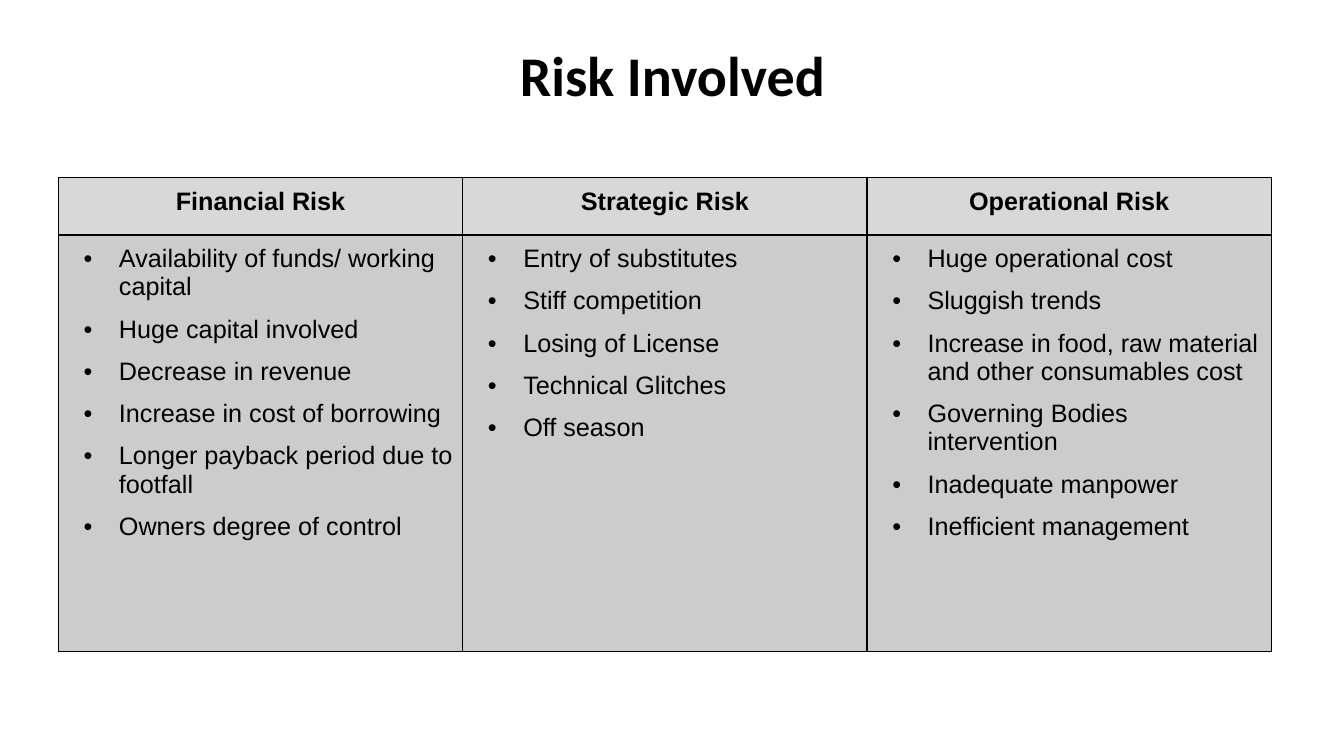
from dataclasses import dataclass

from lxml import etree
from pptx import Presentation
from pptx.dml.color import RGBColor
from pptx.enum.text import MSO_ANCHOR, PP_ALIGN
from pptx.oxml.ns import qn
from pptx.util import Inches, Pt

TOP = MSO_ANCHOR.TOP
CENTER = PP_ALIGN.CENTER
LEFT = PP_ALIGN.LEFT
BLANK_LAYOUT = 6


@dataclass(frozen=True)
class Theme:
    """Colours, fonts and sizes of the slide."""
    ink: str = "000000"
    header_fill: str = "D8D8D8"
    body_fill: str = "CCCCCC"
    title_font: str = "Calibri"
    table_font: str = "Arial"
    title_size: int = 40
    table_size: int = 18
    item_gap: int = 10
    thin_line: int = 1
    thick_line: int = 2


THEME = Theme()

RISKS = {
    "Financial Risk": [
        "Availability of funds/ working capital",
        "Huge capital involved",
        "Decrease in revenue",
        "Increase in cost of borrowing",
        "Longer payback period due to footfall",
        "Owners degree of control",
    ],
    "Strategic Risk": [
        "Entry of substitutes",
        "Stiff competition",
        "Losing of License",
        "Technical Glitches",
        "Off season",
    ],
    "Operational Risk": [
        "Huge operational cost",
        "Sluggish trends",
        "Increase in food, raw material and other consumables cost",
        "Governing Bodies intervention",
        "Inadequate manpower",
        "Inefficient management",
    ],
}


def apply_format(target, values):
    """Set each named attribute of the target."""
    for name, value in values.items():
        setattr(target, name, value)


def style_font(font, name, size, bold):
    """Set the typeface, size, weight and colour of a font."""
    apply_format(font, {"name": name, "size": Pt(size), "bold": bold})
    font.color.rgb = RGBColor.from_string(THEME.ink)


def add_bullet(paragraph):
    """Give a paragraph a hanging bullet."""
    properties = paragraph._p.get_or_add_pPr()
    properties.set("marL", str(Inches(0.6 - 0.1)))
    properties.set("indent", str(-Inches(0.35)))
    colour = etree.SubElement(properties, qn("a:buClr"))
    etree.SubElement(colour, qn("a:srgbClr"), val=THEME.ink)
    etree.SubElement(properties, qn("a:buFont"), typeface=THEME.table_font)
    etree.SubElement(properties, qn("a:buChar"), char="•")


def add_borders(cell, bottom_width):
    """Draw the four borders of a cell."""
    widths = dict.fromkeys(("lnL", "lnR", "lnT"), THEME.thin_line)
    widths["lnB"] = bottom_width
    properties = cell._tc.get_or_add_tcPr()
    for side, width in widths.items():
        line = etree.SubElement(properties, qn(f"a:{side}"), w=str(Pt(width)))
        fill = etree.SubElement(line, qn("a:solidFill"))
        etree.SubElement(fill, qn("a:srgbClr"), val=THEME.ink)


def fill_cell(cell, lines, fill, bottom_width, is_header):
    """Write a header or a bulleted list into a cell and style it."""
    margins = ("margin_left", "margin_top", "margin_right", "margin_bottom")
    apply_format(cell, dict.fromkeys(margins, Inches(0.1)))
    cell.vertical_anchor = TOP
    add_borders(cell, bottom_width)
    cell.fill.solid()
    cell.fill.fore_color.rgb = RGBColor.from_string(fill)
    frame = cell.text_frame
    for index, line in enumerate(lines):
        paragraph = frame.add_paragraph() if index else frame.paragraphs[0]
        paragraph.alignment = CENTER if is_header else LEFT
        paragraph.space_before = Pt(THEME.item_gap if index else 0)
        if not is_header:
            add_bullet(paragraph)
        run = paragraph.add_run()
        run.text = line
        style_font(run.font, THEME.table_font, THEME.table_size, is_header)


def add_title(slide, left, top, width, height):
    """Place the slide title at the top of its box."""
    frame = slide.shapes.add_textbox(left, top, width, height).text_frame
    apply_format(frame, {
        "word_wrap": True,
        "vertical_anchor": TOP,
        "margin_top": Inches(0.08),
    })
    paragraph = frame.paragraphs[0]
    apply_format(paragraph, {"alignment": CENTER, "line_spacing": 0.9})
    run = paragraph.add_run()
    run.text = "Risk Involved"
    style_font(run.font, THEME.title_font, THEME.title_size, True)


def add_risk_table(slide, left, top, width, height):
    """Place the risk table with one column per kind of risk."""
    header_height = Inches(0.57)
    table = slide.shapes.add_table(
        2, len(RISKS), left, top, width, height).table
    apply_format(table, {"first_row": False, "horz_banding": False})
    table.rows[0].height = header_height
    table.rows[1].height = height - header_height
    for column, (heading, items) in enumerate(RISKS.items()):
        fill_cell(table.cell(0, column), [heading], THEME.header_fill,
                  THEME.thick_line, True)
        fill_cell(table.cell(1, column), items, THEME.body_fill,
                  THEME.thin_line, False)


def main():
    """Build the slide and save it."""
    presentation = Presentation()
    apply_format(presentation, {
        "slide_width": Inches(13.33),
        "slide_height": Inches(7.5),
    })
    layout = presentation.slide_layouts[BLANK_LAYOUT]
    slide = presentation.slides.add_slide(layout)
    add_title(slide, Inches(0.92), Inches(0.4), Inches(11.5), Inches(1.45))
    add_risk_table(slide, Inches(0.58), Inches(1.76),
                   Inches(12.03), Inches(4.7))
    presentation.save("out.pptx")


if __name__ == "__main__":
    main()
